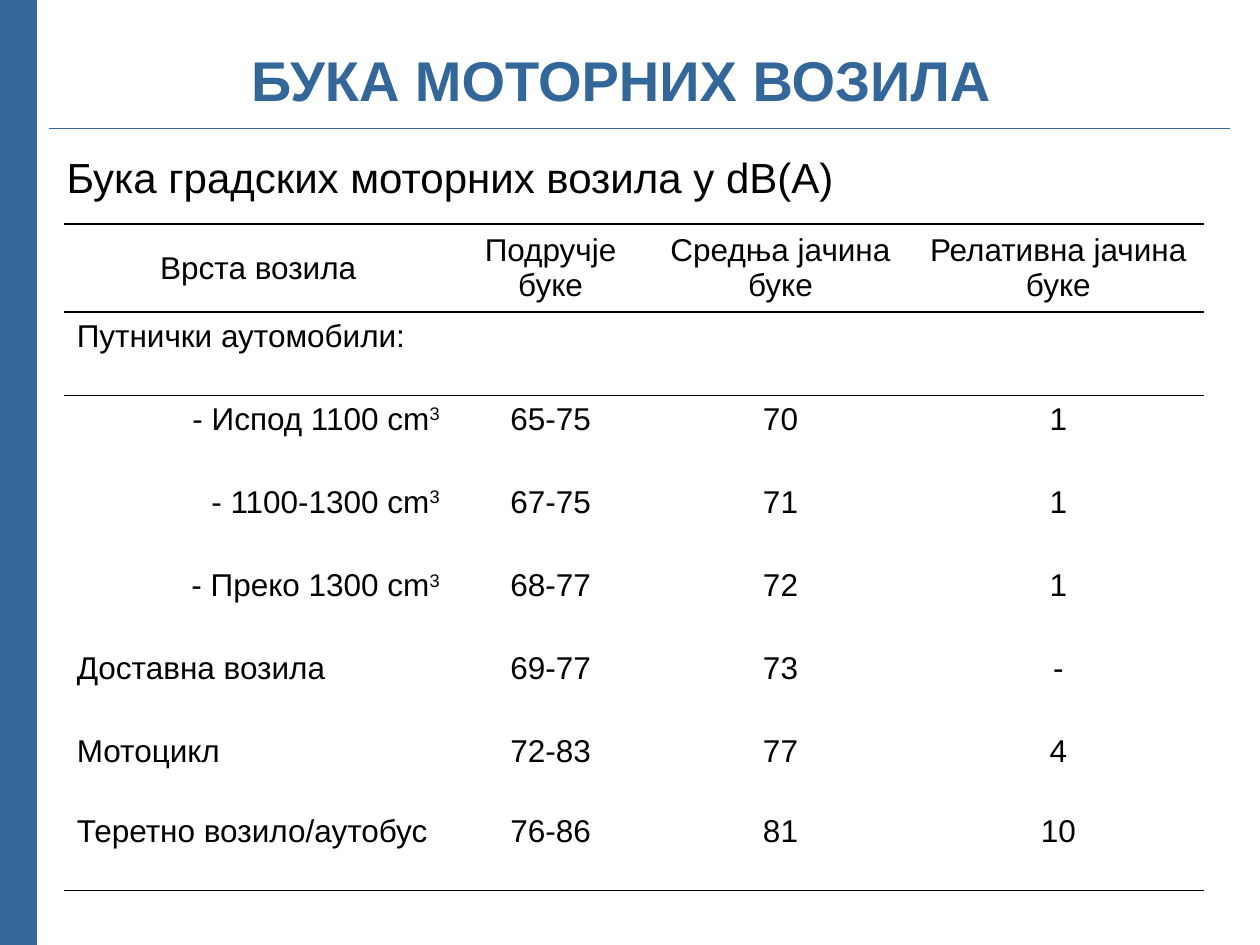
from lxml import etree
from pptx import Presentation
from pptx import util as u
from pptx.dml.color import RGBColor
from pptx.enum import shapes, text
from pptx.oxml.ns import qn

BLUE = RGBColor(0x33, 0x66, 0x99)
BLACK = RGBColor(0, 0, 0)
WIDTH, HEIGHT = u.Inches(10), u.Inches(7.5)
NO_GRID = "{2D5ABB26-0587-4C30-8999-92F81FD0307C}"
LEFT, CENTER, RIGHT = text.PP_ALIGN.LEFT, text.PP_ALIGN.CENTER, text.PP_ALIGN.RIGHT
MIDDLE, TOP = text.MSO_ANCHOR.MIDDLE, text.MSO_ANCHOR.TOP

COLUMNS = (3.08, 1.56, 2.09, 2.32)
ROWS = (0.66,) * 6 + (0.63, 0.66)
DATA = (
    ("Врста возила", "Подручје буке", "Средња јачина буке", "Релативна јачина буке"),
    ("Путнички аутомобили:", "", "", ""),
    ("- Испод 1100 cm³", "65-75", "70", "1"),
    ("- 1100-1300 cm³", "67-75", "71", "1"),
    ("- Преко 1300 cm³", "68-77", "72", "1"),
    ("Доставна возила", "69-77", "73", "-"),
    ("Мотоцикл", "72-83", "77", "4"),
    ("Теретно возило/аутобус", "76-86", "81", "10"),
)


def share(x, y):
    return int(WIDTH * x), int(HEIGHT * y)


def add_run(p, words, size, color=BLACK, bold=False):
    r = p.add_run()
    r.text = words
    r.font.color.rgb = color
    for name, value in {"name": "Arial", "size": u.Pt(size), "bold": bold}.items():
        setattr(r.font, name, value)
    return r


def add_text(s, at, extent, words, align, **font):
    tf = s.shapes.add_textbox(*share(*at), *share(*extent)).text_frame
    for name, value in {"word_wrap": True, "vertical_anchor": MIDDLE}.items():
        setattr(tf, name, value)
    p = tf.paragraphs[0]
    p.alignment = align
    add_run(p, words, **font)


def add_line(s, start, end, width):
    c = s.shapes.add_connector(shapes.MSO_CONNECTOR.STRAIGHT, *share(*start), *share(*end))
    c.line.color.rgb = BLUE
    c.line.width = u.Pt(width)
    etree.SubElement(c._element.spPr, qn("a:effectLst"))


def add_border(cell, side):
    ln = etree.Element(qn(f"a:ln{side}"), w=str(u.Pt(1)))
    fill = etree.SubElement(ln, qn("a:solidFill"))
    etree.SubElement(fill, qn("a:srgbClr"), val=str(BLACK))
    tc_pr = cell._tc.get_or_add_tcPr()
    tc_pr.insert(len(tc_pr.findall(qn("a:lnT"))), ln)


def fill_cell(cell, words, align, anchor):
    cell.fill.background()
    cell.vertical_anchor = anchor
    p = cell.text_frame.paragraphs[0]
    p.alignment = align
    before = etree.SubElement(p._p.get_or_add_pPr(), qn("a:spcBef"))
    etree.SubElement(before, qn("a:spcPct"), val="20000")
    if not words:
        p.font.size = u.Pt(18)
        return
    add_run(p, words.rstrip("³"), 18)
    if words.endswith("³"):
        add_run(p, "3", 18).font._element.set("baseline", "30000")


def add_noise_table(s):
    frame = s.shapes.add_table(len(ROWS), len(COLUMNS), *share(0.051, 0.237), *share(0.906, 0.704))
    table = frame.table
    table.first_row = table.horz_banding = False
    table._tbl.tblPr.find(qn("a:tableStyleId")).text = NO_GRID
    for column, width in zip(table.columns, COLUMNS):
        column.width = u.Inches(width)
    for row, height in zip(table.rows, ROWS):
        row.height = u.Inches(height)
    borders = {0: "TB", 1: "T", len(ROWS) - 1: "B"}
    for i, row in enumerate(DATA):
        for j, words in enumerate(row):
            if i == 0 or j > 0:
                align = CENTER
            else:
                align = RIGHT if words.startswith("-") else LEFT
            fill_cell(table.cell(i, j), words, align, TOP if i else MIDDLE)
            for side in borders.get(i, ""):
                add_border(table.cell(i, j), side)


def main():
    prs = Presentation()
    prs.slide_width, prs.slide_height = WIDTH, HEIGHT
    s = prs.slides.add_slide(prs.slide_layouts[6])
    add_text(s, (0.043, 0), (0.9, 0.167), "БУКА МОТОРНИХ ВОЗИЛА", CENTER,
             size=32, color=BLUE, bold=True)
    add_line(s, (0.002, 0), (0.002, 1), 40)
    add_line(s, (0.039, 0.136), (0.976, 0.136), 0.75)
    add_text(s, (0.043, 0.153), (0.937, 0.067), "Бука градских моторних возила у dB(A)",
             text.PP_ALIGN.JUSTIFY, size=24)
    add_noise_table(s)
    prs.save("out.pptx")


if __name__ == "__main__":
    main()
